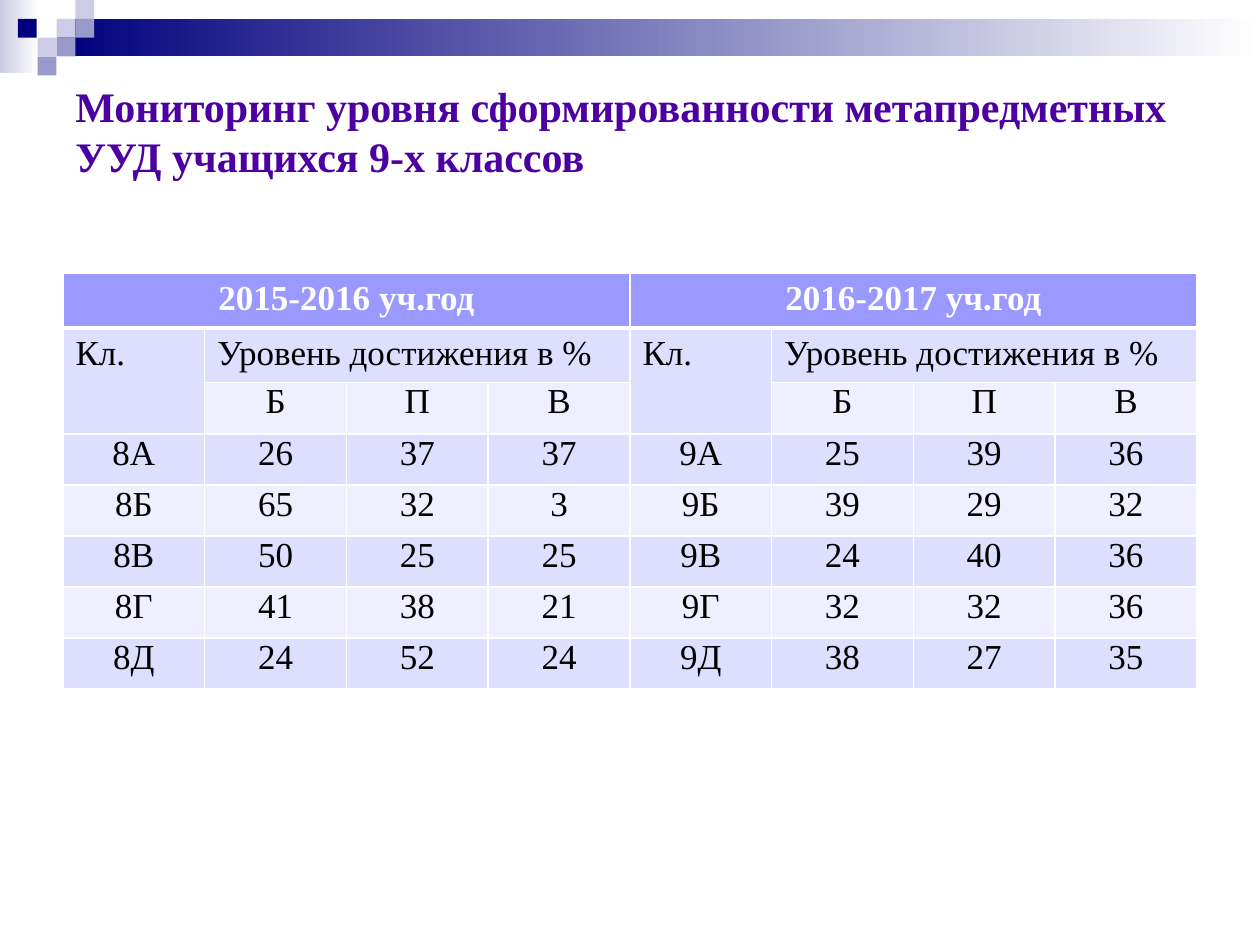
from lxml import etree
from pptx import Presentation
from pptx.dml.color import RGBColor
from pptx.enum.shapes import MSO_SHAPE
from pptx.enum.text import MSO_ANCHOR, PP_ALIGN
from pptx.oxml.ns import qn
from pptx.util import Cm, Pt

RECT = MSO_SHAPE.RECTANGLE
MIDDLE = MSO_ANCHOR.MIDDLE
LEFT, CENTER = PP_ALIGN.LEFT, PP_ALIGN.CENTER

WHITE = RGBColor(0xFF, 0xFF, 0xFF)
BLACK = RGBColor(0x00, 0x00, 0x00)
NAVY = RGBColor(0x00, 0x00, 0x7D)
LAVENDER = RGBColor(0xCC, 0xCC, 0xE6)
VIOLET = RGBColor(0x99, 0x99, 0xCC)
PURPLE = RGBColor(0x4D, 0x00, 0xA2)
HEADER = RGBColor(0x99, 0x99, 0xFF)
BAND_DARK = RGBColor(0xDE, 0xDE, 0xFF)
BAND_LIGHT = RGBColor(0xEF, 0xEF, 0xFF)


def write(tf, text, size=20, color=BLACK, bold=False, align=CENTER):
    p = tf.paragraphs[0]
    p.alignment = align
    r = p.add_run()
    r.text = text
    r.font.name = "Times New Roman"
    r.font.size = Pt(size)
    r.font.bold = bold
    r.font.color.rgb = color


def add_border(cell, side, width):
    ln = etree.SubElement(cell._tc.get_or_add_tcPr(), qn(f"a:{side}"), w=str(Pt(width)))
    fill = etree.SubElement(ln, qn("a:solidFill"))
    etree.SubElement(fill, qn("a:srgbClr"), val=str(WHITE))


prs = Presentation()
prs.slide_width, prs.slide_height = Cm(25.4), Cm(19.05)
s = prs.slides.add_slide(prs.slide_layouts[6])

SQ = 0.38
decor = [
    (0, 0, 0.78, 1.48, LAVENDER, True),
    (1.14, 0.38, 24.26, 0.76, NAVY, True),
    (1.14, 0.38, SQ, SQ, LAVENDER, False),
    (1.52, 0, SQ, SQ, LAVENDER, False),
    (1.52, 0.38, SQ, SQ, VIOLET, False),
    (0.76, 0.76, SQ, SQ, LAVENDER, False),
    (0.36, 0.38, SQ, SQ, NAVY, False),
    (1.14, 0.76, SQ, SQ, VIOLET, False),
    (0.76, 1.14, SQ, SQ, VIOLET, False),
]
for x, y, w, h, color, fades in decor:
    sp = s.shapes.add_shape(RECT, Cm(x), Cm(y), Cm(w), Cm(h))
    sp.shadow.inherit = False
    sp.line.fill.background()
    if fades:
        sp.fill.gradient()
        sp.fill.gradient_angle = 0
        for stop, position, shade in zip(sp.fill.gradient_stops, (0, 1), (color, WHITE)):
            stop.position = position
            stop.color.rgb = shade
    else:
        sp.fill.solid()
        sp.fill.fore_color.rgb = color

title = s.shapes.add_textbox(Cm(1.27), Cm(1.27), Cm(22.86), Cm(2.74))
tf = title.text_frame
tf.word_wrap = True
tf.vertical_anchor = MIDDLE
write(tf, "Мониторинг уровня сформированности метапредметных УУД учащихся 9-х классов",
      size=24, color=PURPLE, bold=True, align=LEFT)

half_header = ["Кл.", "Уровень достижения в %", "", ""]
half_levels = ["", "Б", "П", "В"]
rows = [
    ["2015-2016 уч.год", "", "", "", "2016-2017 уч.год", "", "", ""],
    half_header * 2,
    half_levels * 2,
    ["8А", "26", "37", "37", "9А", "25", "39", "36"],
    ["8Б", "65", "32", "3", "9Б", "39", "29", "32"],
    ["8В", "50", "25", "25", "9В", "24", "40", "36"],
    ["8Г", "41", "38", "21", "9Г", "32", "32", "36"],
    ["8Д", "24", "52", "24", "9Д", "38", "27", "35"],
]
ROW_H = 1.03
table = s.shapes.add_table(len(rows), 8, Cm(1.27), Cm(5.51),
                           Cm(22.86), Cm(ROW_H * len(rows))).table
for row in table.rows:
    row.height = Cm(ROW_H)

for i, values in enumerate(rows):
    for j, text in enumerate(values):
        cell = table.cell(i, j)
        for side in ("lnL", "lnR", "lnT", "lnB"):
            heavy = (i, side) in ((0, "lnB"), (1, "lnT"))
            add_border(cell, side, 3 if heavy else 1)
        cell.fill.solid()
        cell.fill.fore_color.rgb = HEADER if i == 0 else BAND_DARK if i % 2 else BAND_LIGHT
        if i > 1:
            cell.margin_left = cell.margin_right = Cm(0.18)
            cell.margin_top = cell.margin_bottom = Cm(0)
        if text:
            write(cell.text_frame, text, color=BLACK if i else WHITE, bold=i == 0,
                  align=LEFT if i == 1 else CENTER)

for c in (0, 4):
    table.cell(0, c).merge(table.cell(0, c + 3))
    table.cell(1, c).merge(table.cell(2, c))
    table.cell(1, c + 1).merge(table.cell(1, c + 3))

prs.save("out.pptx")
